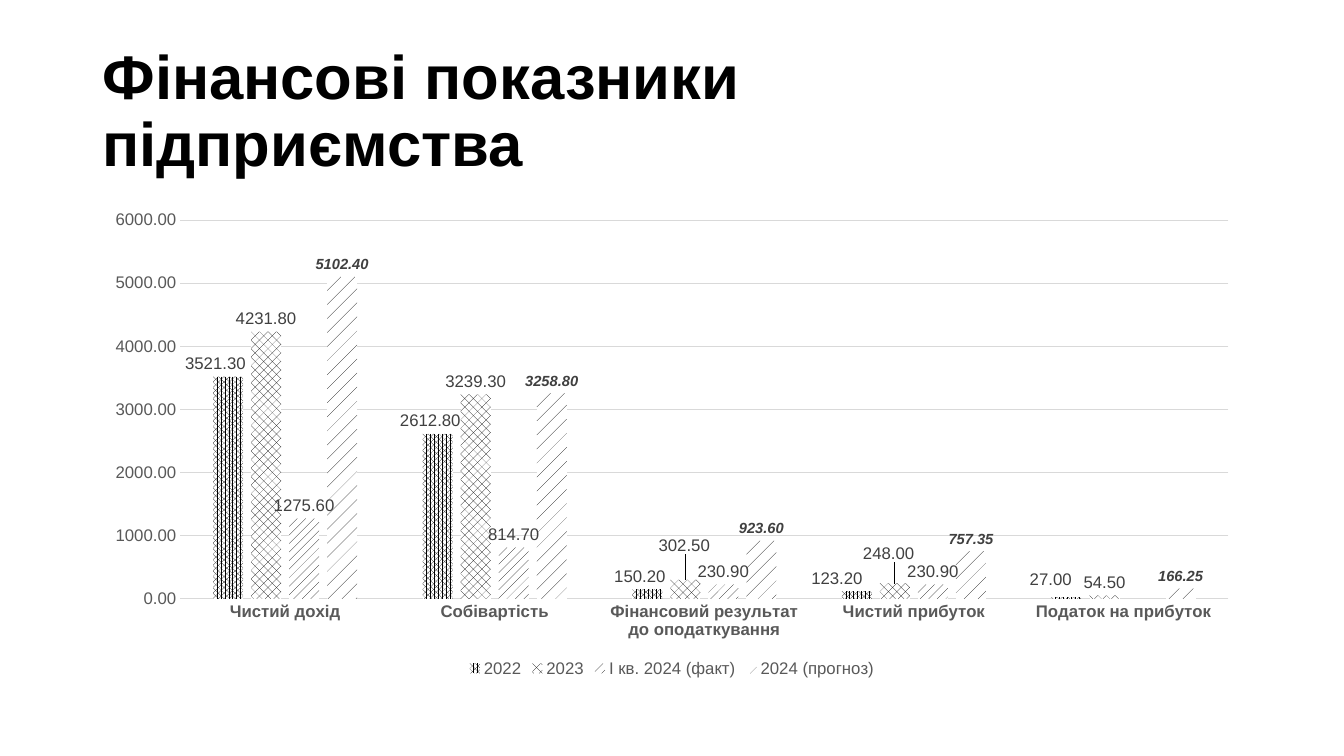
"""Build the slide on the financial results of the enterprise."""
import collections
import dataclasses

import pptx
import pptx.chart.data
import pptx.dml.color
import pptx.enum.chart
import pptx.enum.dml
import pptx.enum.text
import pptx.oxml
import pptx.oxml.ns
import pptx.util

PX = 9525
Box = collections.namedtuple("Box", "left top width height")
CHART = pptx.enum.chart


@dataclasses.dataclass(frozen=True)
class Theme:
    """Colours and type sizes of the slide."""

    font: str = "Arial"
    ink: str = "000000"
    paper: str = "FFFFFF"
    axis: str = "595959"
    label: str = "404040"
    grid: str = "D9D9D9"
    title_size: float = 44
    base_size: float = 10
    text_size: float = 12
    forecast_size: float = 10.5
    line_width: float = 0.75


THEME = Theme()
TITLE = "Фінансові показники \vпідприємства"
CATEGORIES = (
    "Чистий дохід",
    "Собівартість",
    "Фінансовий результат до оподаткування",
    "Чистий прибуток",
    "Податок на прибуток",
)
PLAIN = {"size": THEME.text_size}
FORECAST = {"size": THEME.forecast_size, "bold": True, "italic": True}

Series = collections.namedtuple("Series", "name values pattern font label_shifts")
SERIES = (
    Series("2022", (3521.3, 2612.8, 150.2, 123.2, 27), "pct75", PLAIN,
           {0: (-12, 0), 1: (-7, 0), 2: (-7, 0), 3: (-19, 0), 4: (-15, -4)}),
    Series("2023", (4231.8, 3239.3, 302.5, 248, 54.5), "pct40", PLAIN,
           {2: (-1, -20), 3: (-6, -16)}),
    Series("І кв. 2024 (факт)", (1275.6, 814.7, 230.9, 230.9, None),
           "dashUpDiag", PLAIN, {}),
    Series("2024 (прогноз)", (5102.4, 3258.8, 923.6, 757.35, 166.25),
           "pct5", FORECAST, {}),
)


def rgb(code):
    """Return the colour object of a hex code."""
    return pptx.dml.color.RGBColor.from_string(code)


def set_values(target, values):
    """Set the attributes of an object from a dict."""
    for name, value in values.items():
        setattr(target, name, value)


def style_font(font, color, size, **values):
    """Give a font its face, colour, size and any further values."""
    set_values(font, {"name": THEME.font, "size": pptx.util.Pt(size), **values})
    font.color.rgb = rgb(color)


def style_line(line):
    """Draw a line in the grid colour."""
    line.color.rgb = rgb(THEME.grid)
    line.width = pptx.util.Pt(THEME.line_width)


def shift_label(chart, series_number, point_number, shift, box):
    """Move one data label by a shift in px within the chart box."""
    label = chart.element.xpath(
        f".//c:ser[c:idx/@val='{series_number}']//c:dLbl[c:idx/@val='{point_number}']"
    )[0]
    across, down = shift[0] / box.width, shift[1] / box.height
    layout = pptx.oxml.parse_xml(
        f'<c:layout {pptx.oxml.ns.nsdecls("c")}><c:manualLayout>'
        f'<c:x val="{across:.4f}"/><c:y val="{down:.4f}"/>'
        "</c:manualLayout></c:layout>"
    )
    label.insert(1, layout)


def add_title(page, box):
    """Place and format the slide title."""
    title = page.shapes.title
    set_values(title, {name: value * PX for name, value in box._asdict().items()})
    set_values(title.text_frame, {
        "text": TITLE,
        "word_wrap": True,
        "auto_size": pptx.enum.text.MSO_AUTO_SIZE.NONE,
        "vertical_anchor": pptx.enum.text.MSO_ANCHOR.MIDDLE,
    })
    para = title.text_frame.paragraphs[0]
    set_values(para, {"alignment": pptx.enum.text.PP_ALIGN.LEFT, "line_spacing": 0.9})
    for span in para.runs:
        style_font(span.font, THEME.ink, THEME.title_size, bold=True)


def style_axes(chart):
    """Format the category axis, the value axis and the grid."""
    for axis, bold in ((chart.category_axis, True), (chart.value_axis, False)):
        set_values(axis, {
            "major_tick_mark": CHART.XL_TICK_MARK.NONE,
            "minor_tick_mark": CHART.XL_TICK_MARK.NONE,
        })
        style_font(axis.tick_labels.font, THEME.axis, THEME.text_size, bold=bold)
    style_line(chart.category_axis.format.line)
    chart.value_axis.format.line.fill.background()
    style_line(chart.value_axis.major_gridlines.format.line)
    set_values(chart.value_axis.tick_labels,
               {"number_format": "0.00", "number_format_is_linked": False})


def style_series(chart, number, series, box):
    """Give one series its pattern and its data labels."""
    columns = chart.plots[0].series[number]
    fill = columns.format.fill
    fill.patterned()
    fill.pattern = pptx.enum.dml.MSO_PATTERN.from_xml(series.pattern)
    fill.fore_color.rgb = rgb(THEME.ink)
    fill.back_color.rgb = rgb(THEME.paper)
    columns.format.line.fill.background()
    outside = CHART.XL_LABEL_POSITION.OUTSIDE_END
    set_values(columns.data_labels, {
        "show_value": True,
        "position": outside,
        "number_format": "0.00",
        "number_format_is_linked": False,
    })
    style_font(columns.data_labels.font, THEME.label, **series.font)
    for point_number, shift in series.label_shifts.items():
        label = columns.points[point_number].data_label
        label.position = outside
        style_font(label.font, THEME.label, **series.font)
        shift_label(chart, number, point_number, shift, box)


def add_results_chart(page, box):
    """Place the column chart of the financial results."""
    data = pptx.chart.data.CategoryChartData(number_format="0.00")
    data.categories = CATEGORIES
    for series in SERIES:
        data.add_series(series.name, series.values)
    chart = page.shapes.add_chart(
        CHART.XL_CHART_TYPE.COLUMN_CLUSTERED, *(value * PX for value in box), data
    ).chart
    set_values(chart, {"has_title": False, "has_legend": True})
    style_font(chart.font, THEME.ink, THEME.base_size)
    set_values(chart.plots[0],
               {"gap_width": 219, "overlap": -27, "vary_by_categories": False})
    set_values(chart.legend, {
        "position": CHART.XL_LEGEND_POSITION.BOTTOM,
        "include_in_layout": False,
    })
    style_font(chart.legend.font, THEME.axis, THEME.text_size)
    style_axes(chart)
    for number, series in enumerate(SERIES):
        style_series(chart, number, series, box)


def main():
    """Build the deck and save it."""
    deck = pptx.Presentation()
    set_values(deck, {"slide_width": 1280 * PX, "slide_height": 720 * PX})
    page = deck.slides.add_slide(deck.slide_layouts.get_by_name("Title Only"))
    add_title(page, Box(88, 38, 1104, 139))
    add_results_chart(page, Box(88, 192, 1104, 457))
    deck.save("out.pptx")


if __name__ == "__main__":
    main()
